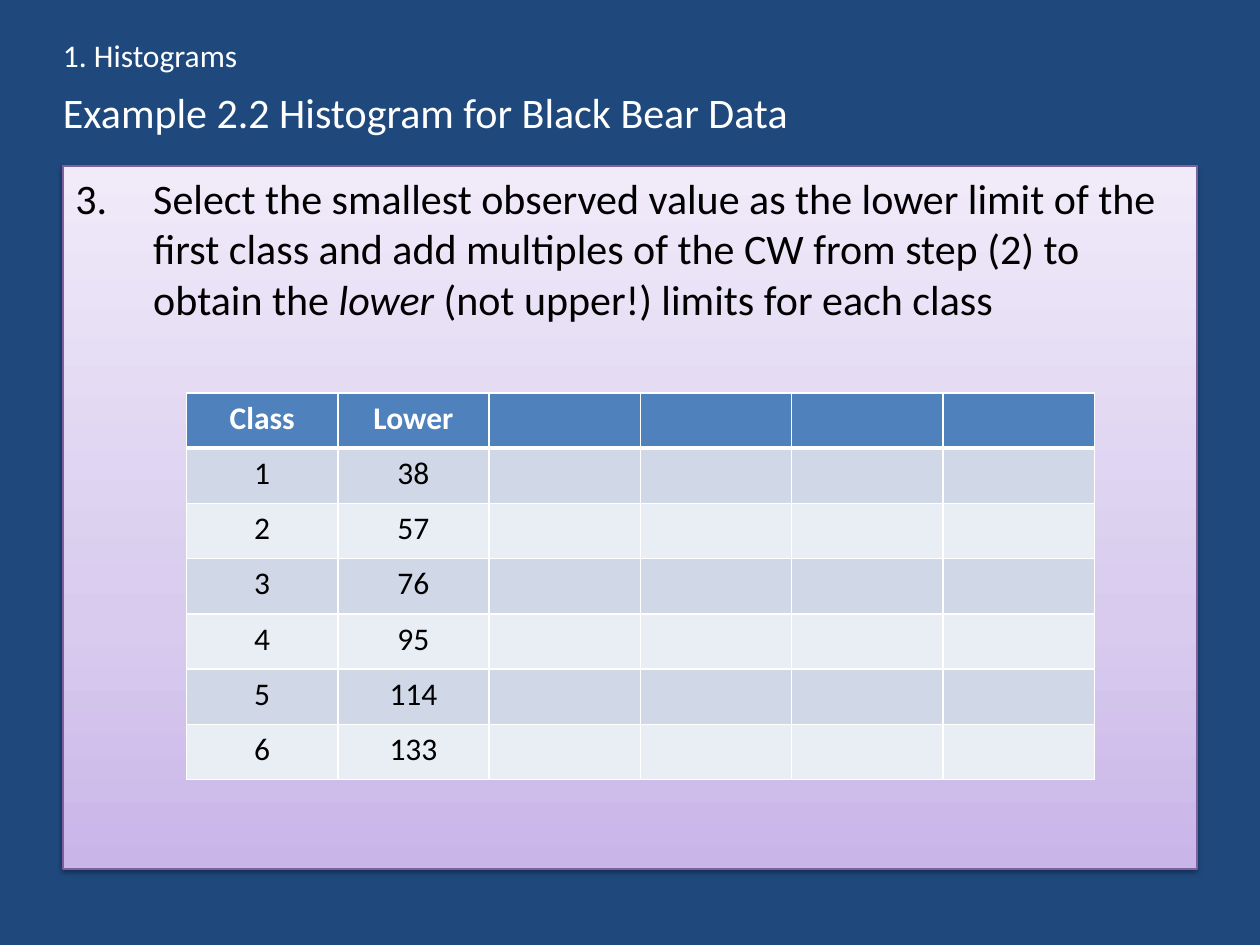
from lxml import etree
from pptx import Presentation
from pptx import util as u
from pptx.dml import color
from pptx.enum import shapes, text
from pptx.oxml import ns, parse_xml

FONT = "Calibri"
WHITE, BLACK, NAVY = "FFFFFF", "000000", "1F497D"
HEADER, BANDS = "4F81BD", ("E9EDF4", "D0D8E8")
PANEL_STOPS = ((0, "C9B5E8"), (35, "D8CBEE"), (100, "F0EAF9"))
LOWER_LIMITS = [38 + 19 * step for step in range(6)]
COLUMNS = 6


def rgb(value):
    return color.RGBColor.from_string(value)


def drawing(xml):
    return parse_xml(f"<a:wrapper {ns.nsdecls('a')}>{xml}</a:wrapper>")[0]


def style(paragraph, size, value, bold=False):
    font = paragraph.font
    font.name, font.size, font.bold = FONT, u.Pt(size), bold
    font.color.rgb = rgb(value)


def add_heading(slide, box, words, size, anchor):
    frame = slide.shapes.add_textbox(*box).text_frame
    frame.word_wrap = True
    frame.vertical_anchor = anchor
    frame.text = words
    style(frame.paragraphs[0], size, WHITE)


def decorate_panel(panel):
    properties = panel._element.spPr
    stops = "".join(
        f'<a:gs pos="{position * 1000}"><a:srgbClr val="{value}"/></a:gs>'
        for position, value in PANEL_STOPS
    )
    gradient = drawing(
        f'<a:gradFill rotWithShape="1"><a:gsLst>{stops}</a:gsLst>'
        '<a:lin ang="16200000" scaled="0"/></a:gradFill>'
    )
    properties.find(ns.qn("a:prstGeom")).addnext(gradient)
    panel.line.color.rgb = rgb("7D60A0")
    panel.line.width = u.Pt(0.75)
    properties.append(drawing(
        f'<a:effectLst><a:outerShdw blurRad="{u.Pt(3.1)}" dist="{u.Pt(1.6)}" '
        'dir="5400000" rotWithShape="0"><a:srgbClr val="000000">'
        '<a:alpha val="38000"/></a:srgbClr></a:outerShdw></a:effectLst>'
    ))


def add_step(frame):
    frame.word_wrap = True
    frame.vertical_anchor = text.MSO_ANCHOR.TOP
    paragraph = frame.paragraphs[0]
    paragraph.alignment = text.PP_ALIGN.LEFT
    paragraph.space_before = u.Pt(4.8)
    for words, italic in (
        ("Select the smallest observed value as the lower limit of the first class "
         "and add multiples of the CW from step (2) to obtain the ", False),
        ("lower", True),
        (" (not upper!) limits for each class", False),
    ):
        run = paragraph.add_run()
        run.text = words
        run.font.italic = italic
    style(paragraph, 24, BLACK)
    properties = paragraph._p.get_or_add_pPr()
    properties.set("marL", str(u.Cm(1.57)))
    properties.set("indent", str(-u.Cm(1.57)))
    number = drawing('<a:buAutoNum type="arabicPeriod" startAt="3"/>')
    properties.find(ns.qn("a:defRPr")).addprevious(number)


def set_borders(cell, top, bottom):
    properties = cell._tc.get_or_add_tcPr()
    for side, width in (("L", 1), ("R", 1), ("T", top), ("B", bottom)):
        line = etree.SubElement(properties, ns.qn(f"a:ln{side}"), w=str(u.Pt(width)))
        fill = etree.SubElement(line, ns.qn("a:solidFill"))
        etree.SubElement(fill, ns.qn("a:srgbClr"), val=WHITE)


def add_class_table(slide, left, top, width, height):
    rows = [("Class", "Lower")] + list(enumerate(LOWER_LIMITS, 1))
    table = slide.shapes.add_table(len(rows), COLUMNS, left, top, width, height).table
    for row, values in enumerate(rows):
        is_header = row == 0
        for column in range(COLUMNS):
            cell = table.cell(row, column)
            set_borders(cell, 3 if row == 1 else 1, 3 if is_header else 1)
            cell.fill.solid()
            cell.fill.fore_color.rgb = rgb(HEADER if is_header else BANDS[row % 2])
            if column < len(values):
                cell.text = str(values[column])
            paragraph = cell.text_frame.paragraphs[0]
            paragraph.alignment = text.PP_ALIGN.CENTER
            style(paragraph, 18, WHITE if is_header else BLACK, is_header)


def add_header(slide, left, top, width):
    add_heading(slide, (left, top, width, u.Cm(1.02)),
                "1. Histograms", 18, text.MSO_ANCHOR.TOP)
    add_heading(slide, (left, top + u.Cm(0.96), width, u.Cm(1.37)),
                "Example 2.2 Histogram for Black Bear Data", 24, text.MSO_ANCHOR.MIDDLE)


def add_body(slide, left, top, width, height):
    panel = slide.shapes.add_shape(
        shapes.MSO_SHAPE.RECTANGLE, left, top, width, height)
    decorate_panel(panel)
    add_step(panel.text_frame)
    add_class_table(slide, left + u.Cm(2.49), top + u.Cm(4.57), u.Cm(18.3), u.Cm(7.8))


def main():
    presentation = Presentation()
    presentation.slide_width, presentation.slide_height = u.Cm(25.4), u.Cm(19.05)
    slide = presentation.slides.add_slide(presentation.slide_layouts[6])
    slide.background.fill.solid()
    slide.background.fill.fore_color.rgb = rgb(NAVY)
    add_header(slide, u.Cm(1.02), u.Cm(0.61), u.Cm(22.86))
    add_body(slide, u.Cm(1.27), u.Cm(3.35), u.Cm(22.86), u.Cm(14.17))
    presentation.save("out.pptx")


if __name__ == "__main__":
    main()
